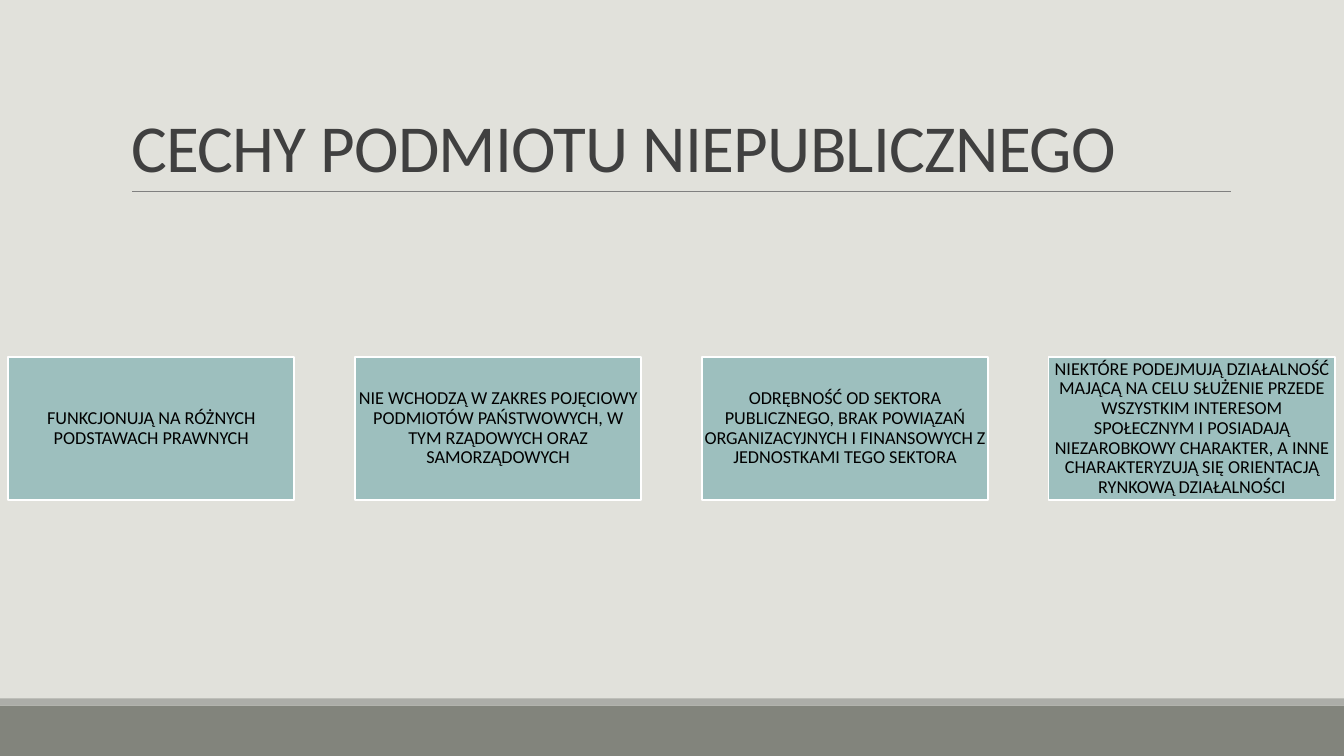
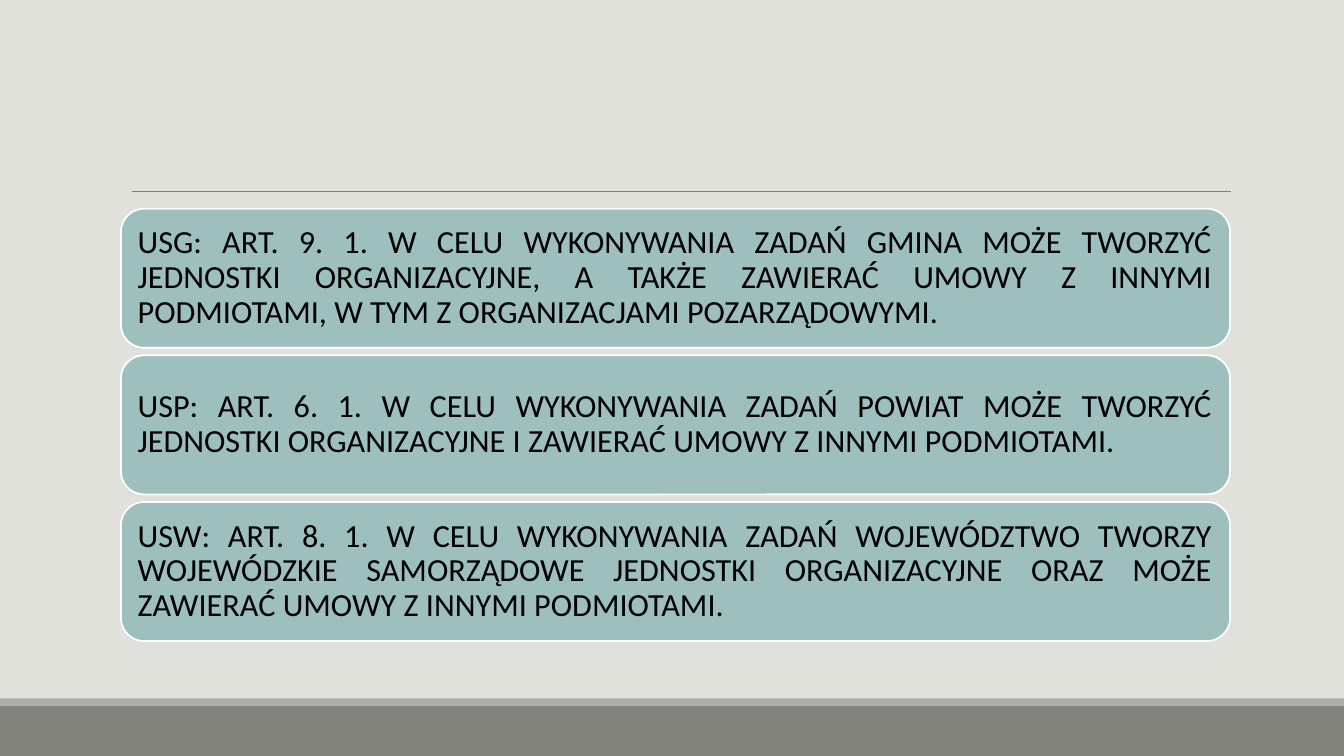
"""Build two slides on non-public entities and statutory cooperation."""
from lxml import etree
from pptx import Presentation
from pptx.dml.color import RGBColor
from pptx.enum.shapes import MSO_CONNECTOR, MSO_SHAPE
from pptx.enum.text import MSO_ANCHOR, MSO_AUTO_SIZE, PP_ALIGN
from pptx.oxml.ns import qn
from pptx.util import Inches, Pt

RECT, ROUNDED = MSO_SHAPE.RECTANGLE, MSO_SHAPE.ROUNDED_RECTANGLE
STRAIGHT = MSO_CONNECTOR.STRAIGHT
LEFT, CENTER, JUSTIFY = PP_ALIGN.LEFT, PP_ALIGN.CENTER, PP_ALIGN.JUSTIFY
MIDDLE, BOTTOM = MSO_ANCHOR.MIDDLE, MSO_ANCHOR.BOTTOM
NO_AUTOFIT = MSO_AUTO_SIZE.NONE
TITLE_ONLY, BLANK = 5, 6

FONT = "Calibri"
BACKGROUND, RULE, TITLE_INK = "E1E1DB", "808080", "404040"
CARD_FILL, CARD_EDGE, CARD_INK = "9DBFBE", "FFFFFF", "000000"
BANDS = [(7, 0.5, "82847C"), (6.93, 0.07, "ACADA8")]
SLIDE_WIDTH, SLIDE_HEIGHT = 13.33, 7.5

TITLE = "CECHY PODMIOTU NIEPUBLICZNEGO"
FEATURES = [
    "FUNKCJONUJĄ NA RÓŻNYCH PODSTAWACH PRAWNYCH",
    "NIE WCHODZĄ W ZAKRES POJĘCIOWY PODMIOTÓW PAŃSTWOWYCH, W TYM RZĄDOWYCH "
    "ORAZ SAMORZĄDOWYCH",
    "ODRĘBNOŚĆ OD SEKTORA PUBLICZNEGO, BRAK POWIĄZAŃ ORGANIZACYJNYCH "
    "I FINANSOWYCH Z JEDNOSTKAMI TEGO SEKTORA",
    "NIEKTÓRE PODEJMUJĄ DZIAŁALNOŚĆ MAJĄCĄ NA CELU SŁUŻENIE PRZEDE WSZYSTKIM "
    "INTERESOM SPOŁECZNYM I POSIADAJĄ NIEZAROBKOWY CHARAKTER, A INNE "
    "CHARAKTERYZUJĄ SIĘ ORIENTACJĄ RYNKOWĄ DZIAŁALNOŚCI",
]
STATUTES = [
    "USG: ART. 9. 1. W CELU WYKONYWANIA ZADAŃ GMINA MOŻE TWORZYĆ JEDNOSTKI "
    "ORGANIZACYJNE, A TAKŻE ZAWIERAĆ UMOWY Z INNYMI PODMIOTAMI, W TYM "
    "Z ORGANIZACJAMI POZARZĄDOWYMI.",
    "USP: ART. 6. 1. W CELU WYKONYWANIA ZADAŃ POWIAT MOŻE TWORZYĆ JEDNOSTKI "
    "ORGANIZACYJNE I ZAWIERAĆ UMOWY Z INNYMI PODMIOTAMI.",
    "USW: ART. 8. 1. W CELU WYKONYWANIA ZADAŃ WOJEWÓDZTWO TWORZY WOJEWÓDZKIE "
    "SAMORZĄDOWE JEDNOSTKI ORGANIZACYJNE ORAZ MOŻE ZAWIERAĆ UMOWY Z INNYMI "
    "PODMIOTAMI.",
]


def color(value):
    return RGBColor.from_string(value)


def paint(fill, value):
    fill.solid()
    fill.fore_color.rgb = color(value)


def write(frame, text, size, ink, align, anchor, spacing):
    frame.word_wrap = True
    frame.auto_size = NO_AUTOFIT
    frame.vertical_anchor = anchor
    paragraph = frame.paragraphs[0]
    paragraph.alignment = align
    paragraph.line_spacing = spacing
    run = paragraph.add_run()
    run.text = text
    run.font.name = FONT
    run.font.size = Pt(size)
    run.font.color.rgb = color(ink)
    return run


def add_block(slide, kind, left, top, width, height, fill):
    block = slide.shapes.add_shape(
        kind, Inches(left), Inches(top), Inches(width), Inches(height))
    block.shadow.inherit = False
    paint(block.fill, fill)
    block.line.fill.background()
    return block


def add_card(slide, kind, box, text, size, align, inset):
    card = add_block(slide, kind, *box, CARD_FILL)
    card.line.color.rgb = color(CARD_EDGE)
    card.line.width = Pt(1.25)
    frame = card.text_frame
    frame.margin_left = frame.margin_right = Inches(inset)
    frame.margin_top = frame.margin_bottom = Inches(inset)
    write(frame, text, size, CARD_INK, align, MIDDLE, 0.9)


def dress_master(master, slide):
    """Draw the shared bands and rule, then move them to the master."""
    paint(master.background.fill, BACKGROUND)
    decor = [add_block(slide, RECT, 0, top, SLIDE_WIDTH, height, fill)
             for top, height, fill in BANDS]
    rule = slide.shapes.add_connector(
        STRAIGHT, Inches(1.31), Inches(1.9), Inches(12.21), Inches(1.9))
    rule.line.color.rgb = color(RULE)
    rule.line.width = Pt(0.5)
    etree.SubElement(rule.element.spPr, qn("a:effectLst"))
    for number, part in enumerate(decor + [rule], start=101):
        part.element.xpath(".//p:cNvPr")[0].set("id", str(number))
        master.shapes.element.append(part.element)


def set_title(slide):
    title = slide.shapes.title
    title.left, title.top = Inches(1.2), Inches(0.31)
    title.width, title.height = Inches(11), Inches(1.59)
    run = write(title.text_frame, TITLE, 48, TITLE_INK, LEFT, BOTTOM, 0.85)
    run.font._element.set("spc", "-50")


def add_features(slide):
    width, height, pitch = 2.84, 1.42, 3.44
    for column, text in enumerate(FEATURES):
        box = (0.08 + column * pitch, 3.54, width, height)
        add_card(slide, RECT, box, text, 13, CENTER, 0.01)


def add_statutes(slide):
    height, gap = 1.38, 0.075
    for row, text in enumerate(STATUTES):
        box = (1.2, 2.07 + row * (height + gap), 11, height)
        add_card(slide, ROUNDED, box, text, 23, JUSTIFY, 0.1)


def main():
    prs = Presentation()
    prs.slide_width, prs.slide_height = Inches(SLIDE_WIDTH), Inches(SLIDE_HEIGHT)
    features = prs.slides.add_slide(prs.slide_layouts[TITLE_ONLY])
    statutes = prs.slides.add_slide(prs.slide_layouts[BLANK])
    dress_master(prs.slide_master, features)
    set_title(features)
    add_features(features)
    add_statutes(statutes)
    prs.save("out.pptx")


if __name__ == "__main__":
    main()
